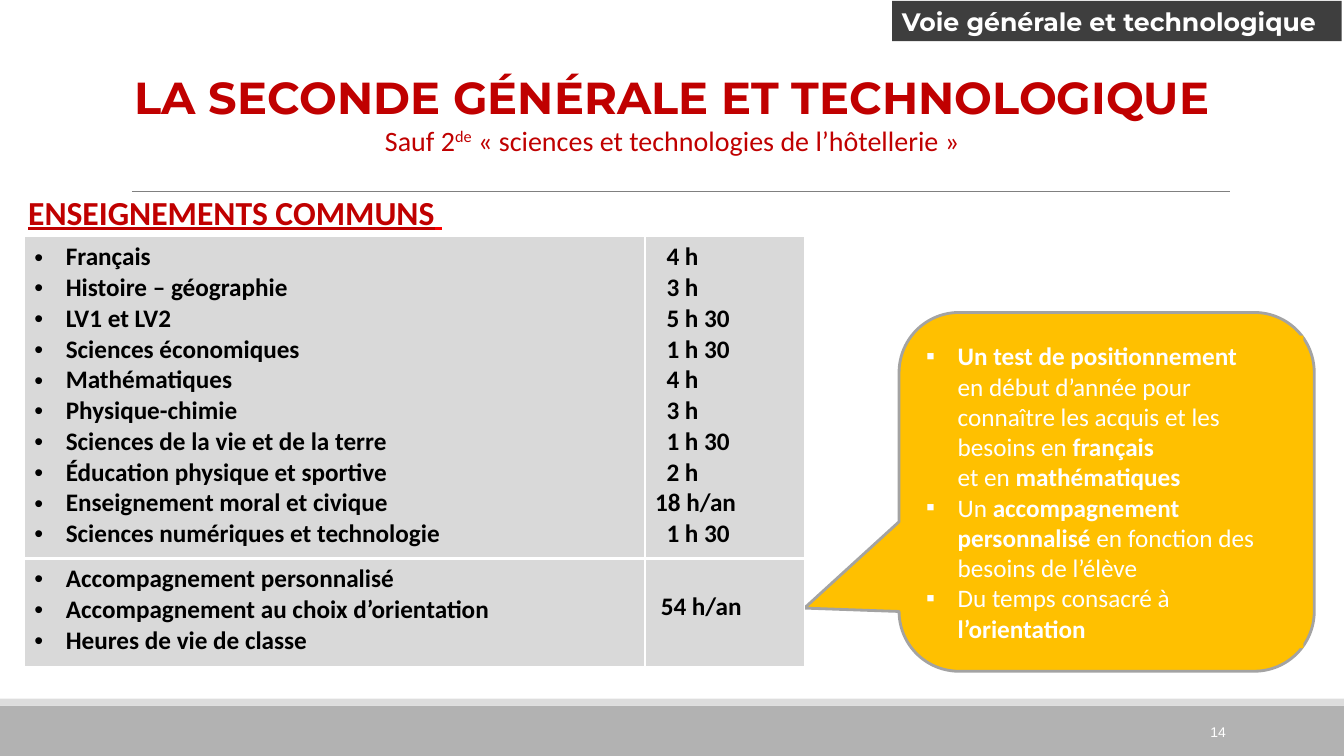
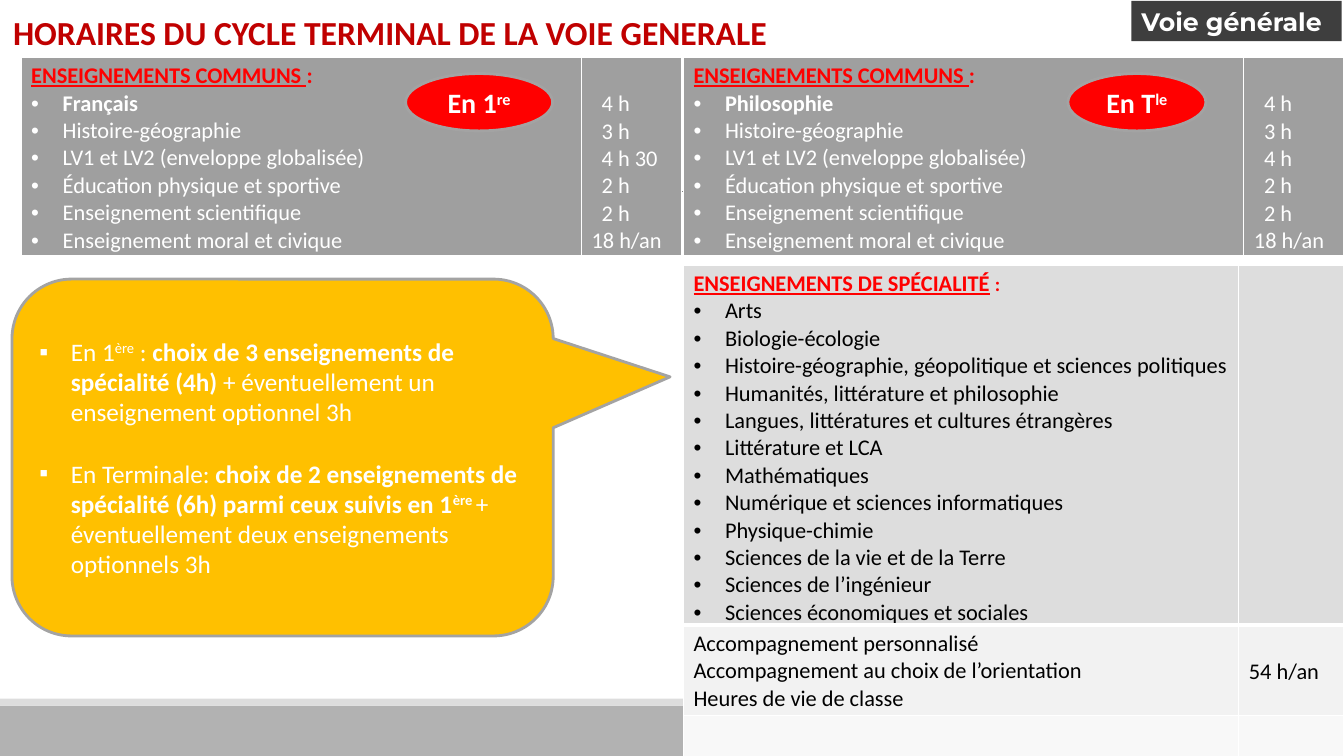
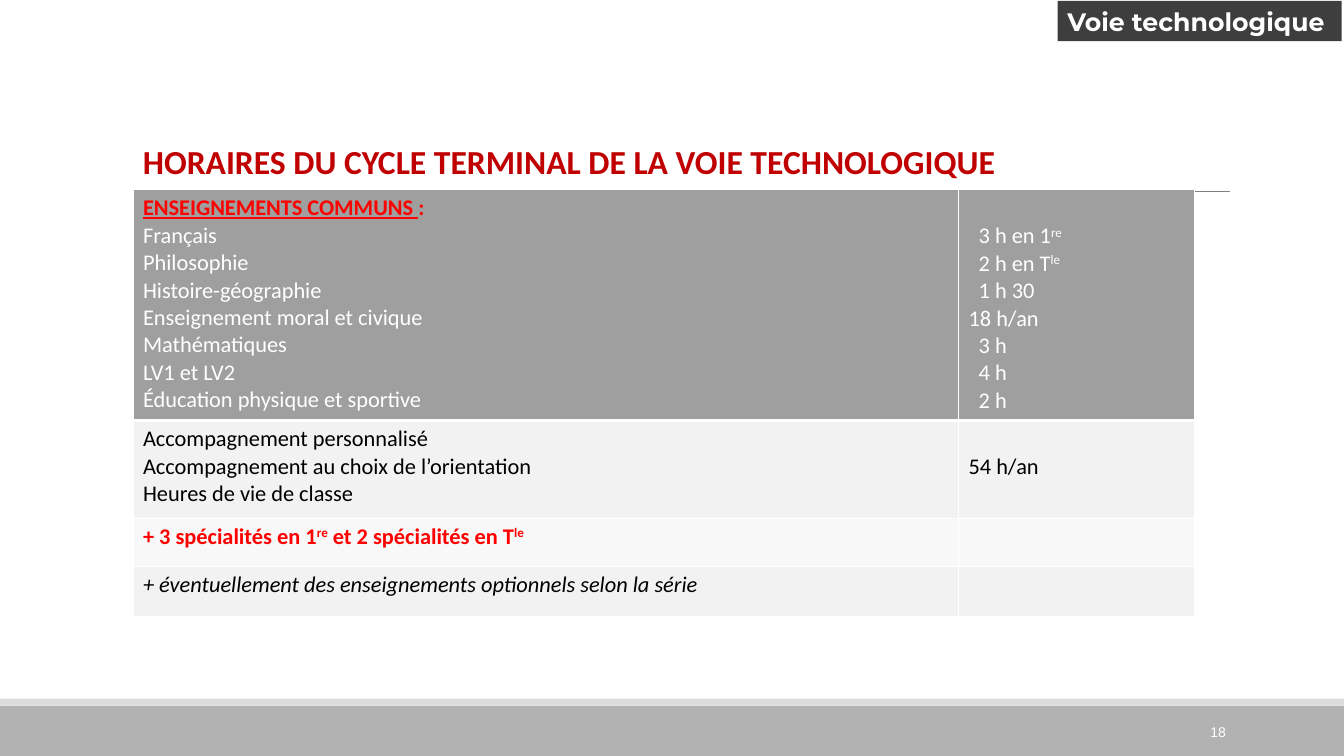
import dataclasses

import lxml.etree
import pptx
import pptx.dml.color
import pptx.enum.shapes
import pptx.enum.text
import pptx.oxml.ns
import pptx.util

Pt = pptx.util.Pt
qn = pptx.oxml.ns.qn
SHAPES = pptx.enum.shapes.MSO_SHAPE
ALIGN = pptx.enum.text.PP_ALIGN
ANCHOR = pptx.enum.text.MSO_ANCHOR
AUTO_SIZE = pptx.enum.text.MSO_AUTO_SIZE

WHITE, BLACK, RED, DARK_RED = "FFFFFF", "000000", "FF0000", "C00000"
AMBER, OUTLINE, TAG_GREY = "FFC000", "A3A3A3", "3E3E3E"
HEADER_GREY, COMMON_GREY, SPECIALTY_GREY = "9F9F9F", "D9D9D9", "DDDDDD"
LIGHT_GREY, PALE_GREY = "F2F2F2", "F8F8F8"
BAND_GREY, RULE_GREY = "B2B2B2", "808080"
SLIDE_WIDTH, SLIDE_HEIGHT = 960, 540
TAG_RIGHT = 958.4
BULLET_INDENT = 22.5
HOURS_TOP = 23.6
THIN, THICK = 0.96, 3
COMMON_HEADING = [("ENSEIGNEMENTS COMMUNS ", "bur"), (":", "br")]
SUPPORT = ["Accompagnement personnalisé", "Accompagnement au choix de l’orientation",
           "Heures de vie de classe"]


@dataclasses.dataclass
class Line:
    """One paragraph: plain text or (text, marks[, size]) runs, with ^ around superscripts."""
    runs: object
    size: float = 18
    color: str = WHITE
    marks: str = ""
    font: str = "Calibri"
    bullet: str = ""
    indent: float = 0
    align: object = ALIGN.LEFT
    before: float = 0


@dataclasses.dataclass
class Row:
    """One timetable row: subjects on the left, hours on the right."""
    height: float
    fill: str
    subjects: list
    hours: list
    hours_top: float = HOURS_TOP
    bottom: float = THIN


def rgb(color):
    """Turn a hex string into a colour."""
    return pptx.dml.color.RGBColor.from_string(color)


def add_runs(paragraph, line):
    """Add the runs of a line with their marks: b, i, u, r for red."""
    runs = [(line.runs, line.marks)] if isinstance(line.runs, str) else line.runs
    for text, marks, *size in runs:
        if text == "\n":
            paragraph.add_line_break()
            continue
        for index, piece in enumerate(text.split("^")):
            if not piece:
                continue
            run = paragraph.add_run()
            run.text = piece
            run.font.size = Pt(size[0] if size else line.size)
            run.font.name = line.font
            run.font.bold = "b" in marks
            run.font.italic = "i" in marks
            run.font.underline = "u" in marks
            run.font.color.rgb = rgb(RED if "r" in marks else line.color)
            if index % 2:
                run.font._element.set("baseline", "30000")


def set_indent(paragraph, line):
    """Indent a paragraph and give it its bullet."""
    properties = paragraph._p.get_or_add_pPr()
    indent = BULLET_INDENT if line.bullet else line.indent
    properties.set("marL", str(int(Pt(indent))))
    properties.set("indent", str(-int(Pt(indent))) if line.bullet else "0")
    if line.bullet:
        lxml.etree.SubElement(properties, qn("a:buFont")).set("typeface", "Arial")
        lxml.etree.SubElement(properties, qn("a:buChar")).set("char", line.bullet)


def write_lines(text_frame, lines):
    """Fill a text frame with lines."""
    for index, line in enumerate(lines):
        paragraph = text_frame.add_paragraph() if index else text_frame.paragraphs[0]
        paragraph.alignment = line.align
        if line.before:
            paragraph.space_before = Pt(line.before)
        set_indent(paragraph, line)
        add_runs(paragraph, line)


def add_box(slide, kind, place, fill, lines=(), outline=None, anchor=ANCHOR.TOP,
            wrap=True, grow=False):
    """Add a filled preset shape with optional text."""
    shape = slide.shapes.add_shape(kind, *map(Pt, place))
    shape.shadow.inherit = False
    shape.fill.solid()
    shape.fill.fore_color.rgb = rgb(fill)
    if outline:
        shape.line.color.rgb = rgb(outline)
        shape.line.width = Pt(2)
    else:
        shape.line.fill.background()
    fill_frame(shape.text_frame, lines, anchor, wrap, grow)
    return shape


def fill_frame(text_frame, lines, anchor, wrap, grow):
    """Set how a text frame behaves and write its lines."""
    text_frame.vertical_anchor = anchor
    text_frame.word_wrap = wrap
    text_frame.auto_size = AUTO_SIZE.SHAPE_TO_FIT_TEXT if grow else AUTO_SIZE.NONE
    write_lines(text_frame, lines)


def add_text(slide, place, lines, anchor=ANCHOR.TOP, wrap=False, grow=True):
    """Add a text box."""
    box = slide.shapes.add_textbox(*map(Pt, place))
    fill_frame(box.text_frame, lines, anchor, wrap, grow)


def add_callout(slide, place, tail, lines=()):
    """Add an amber speech bubble whose tail ends at the given offsets."""
    callout = add_box(slide, SHAPES.ROUNDED_RECTANGULAR_CALLOUT, place, AMBER, lines,
                      OUTLINE, ANCHOR.MIDDLE)
    for index, value in enumerate((*tail, 0.167)):
        callout.adjustments[index] = value


def add_tag(slide, text, width):
    """Add the dark label in the top right corner."""
    line = Line(text, marks="b", font="Montserrat")
    add_box(slide, SHAPES.RECTANGLE, (TAG_RIGHT - width, 0.7, width, 28.8), TAG_GREY,
            [line], wrap=False, grow=True)


def add_level_badge(slide, left, width, text):
    """Add the red oval that names the school year."""
    line = Line(text, 20, marks="b", align=ALIGN.CENTER)
    add_box(slide, SHAPES.OVAL, (left, 52.56, width, 41), RED, [line], OUTLINE, ANCHOR.MIDDLE)


def add_page_number(slide, number):
    """Add the page number in the bottom band."""
    line = Line(str(number), 10, font="Arial", align=ALIGN.RIGHT)
    add_text(slide, (779.8, 508.3, 103, 28.8), [line], ANCHOR.MIDDLE, True, False)


def set_borders(cell, bottom):
    """Give a cell white borders, with its own bottom width."""
    properties = cell._tc.get_or_add_tcPr()
    widths = {"a:lnL": THIN, "a:lnR": THIN, "a:lnT": THIN, "a:lnB": bottom}
    for index, (name, width) in enumerate(widths.items()):
        border = lxml.etree.Element(qn(name), w=str(int(Pt(width))))
        solid = lxml.etree.SubElement(border, qn("a:solidFill"))
        lxml.etree.SubElement(solid, qn("a:srgbClr")).set("val", WHITE)
        properties.insert(index, border)


def add_timetable(slide, left, top, widths, rows):
    """Add a two-column table of subjects and hours."""
    height = sum(row.height for row in rows)
    frame = slide.shapes.add_table(len(rows), 2, Pt(left), Pt(top), Pt(sum(widths)), Pt(height))
    table = frame.table
    table.first_row = table.horz_banding = False
    for column, width in zip(table.columns, widths):
        column.width = Pt(width)
    for index, row in enumerate(rows):
        table.rows[index].height = Pt(row.height)
        for cell, lines in zip(table.rows[index].cells, (row.subjects, row.hours)):
            cell.fill.solid()
            cell.fill.fore_color.rgb = rgb(row.fill)
            set_borders(cell, row.bottom)
            write_lines(cell.text_frame, lines)
        if row.hours:
            table.cell(index, 1).margin_top = Pt(row.hours_top)


def text_lines(texts, size, color, marks="", bullet=""):
    """Make lines of one style."""
    return [Line(text, size, color, marks, bullet=bullet) for text in texts]


def hour_lines(texts, size, color, marks=""):
    """Make lines of hours, indenting weekly ones under the yearly ones."""
    return [Line(text, size, color, marks, indent=0 if text.endswith("/an") else 0.45 * size)
            for text in texts]


def add_slide(presentation):
    """Add a blank slide with the shared rule and bottom bands."""
    slide = presentation.slides.add_slide(presentation.slide_layouts[6])
    rule = slide.shapes.add_connector(pptx.enum.shapes.MSO_CONNECTOR.STRAIGHT,
                                      Pt(94.3), Pt(136.8), Pt(878.4), Pt(136.8))
    rule.line.color.rgb = rgb(RULE_GREY)
    rule.line.width = Pt(0.5)
    lxml.etree.SubElement(rule._element.spPr, qn("a:effectLst"))
    add_box(slide, SHAPES.RECTANGLE, (0, 504, SLIDE_WIDTH, 36), BAND_GREY)
    add_box(slide, SHAPES.RECTANGLE, (0, 499, SLIDE_WIDTH, 5), SPECIALTY_GREY)
    return slide


def build_second_year(presentation):
    """Build the slide on the first lycée year."""
    slide = add_slide(presentation)
    add_callout(slide, (642.2, 223.2, 296.6, 256.3), (-0.728, 0.324))
    advice = [
        [("Un test de positionnement ", "b"), ("\n", ""),
         ("en début d’année pour connaître les acquis et les besoins en ", ""),
         ("français ", "b"), ("\n", ""), ("et en ", ""), ("mathématiques", "b")],
        [("Un ", ""), ("accompagnement personnalisé ", "b"),
         ("en fonction des besoins de l’élève", "")],
        [("Du temps consacré à ", ""), ("l’orientation", "b")],
    ]
    add_box(slide, SHAPES.RECTANGLE, (654.5, 239.8, 276.5, 223.2), AMBER,
            text_lines(advice, 18, WHITE, bullet="▪"), grow=True)
    subjects = ["Français", "Histoire – géographie", "LV1 et LV2", "Sciences économiques",
                "Mathématiques", "Physique-chimie", "Sciences de la vie et de la terre",
                "Éducation physique et sportive", "Enseignement moral et civique",
                "Sciences numériques et technologie"]
    hours = ["4 h", "3 h", "5 h 30", "1 h 30", "4 h", "3 h", "1 h 30", "2 h", "18 h/an", "1 h 30"]
    support = ["Accompagnement personnalisé", "Accompagnement au choix d’orientation",
               "Heures de vie de classe"]
    add_timetable(slide, 17.3, 169.2, (443.5, 113.8), [
        Row(229.7, COMMON_GREY, text_lines(subjects, 18, BLACK, "b", "•"),
            hour_lines(hours, 18, BLACK, "b"), 3.6, THICK),
        Row(77, COMMON_GREY, text_lines(support, 18, BLACK, "b", "•"),
            [Line("54 h/an", 18, BLACK, "b", indent=4)]),
    ])
    add_text(slide, (64.8, 46.1, 830.9, 69.8), [
        Line("LA SECONDE GÉNÉRALE ET TECHNOLOGIQUE", 32, DARK_RED, "b", "Montserrat",
             align=ALIGN.CENTER),
        Line("Sauf 2^de^ « sciences et technologies de l’hôtellerie »", 20, DARK_RED,
             align=ALIGN.CENTER),
    ])
    add_tag(slide, "Voie générale et technologique", 321.2)
    add_text(slide, (13, 133.2, 310.3, 36),
             [Line([("ENSEIGNEMENTS COMMUNS", "bu"), (" ", "bur")], 24, DARK_RED)])
    add_page_number(slide, 14)


def build_general(presentation):
    """Build the slide on the general track."""
    slide = add_slide(presentation)
    add_text(slide, (2.2, 5, 553.7, 36),
             [Line("HORAIRES DU CYCLE TERMINAL DE LA VOIE GENERALE", 24, DARK_RED, "b")])
    add_tag(slide, "Voie générale", 150.2)
    shared = ["Histoire-géographie", "LV1 et LV2 (enveloppe globalisée)",
              "Éducation physique et sportive", "Enseignement scientifique",
              "Enseignement moral et civique"]
    years = [(15.1, "Français", "4 h 30", "En 1^re^", 105.1),
             (488.2, "Philosophie", "4 h", "En T^le^", 98.6)]
    for left, first, languages, label, badge_width in years:
        subjects = [Line(COMMON_HEADING, 16), Line(first, 16, marks="b", bullet="•"),
                    *text_lines(shared, 16, WHITE, bullet="•")]
        hours = hour_lines(["4 h", "3 h", languages, "2 h", "2 h", "18 h/an"], 16, WHITE)
        add_timetable(slide, left, 41, (400.3, 71.3),
                      [Row(141.8, HEADER_GREY, subjects, hours, bottom=THICK)])
        add_level_badge(slide, left + 274.6, badge_width, label)
    specialties = ["Arts", "Biologie-écologie",
                   "Histoire-géographie, géopolitique et sciences politiques",
                   "Humanités, littérature et philosophie",
                   "Langues, littératures et cultures étrangères", "Littérature et LCA",
                   "Mathématiques", "Numérique et sciences informatiques", "Physique-chimie",
                   "Sciences de la vie et de la Terre", "Sciences de l’ingénieur",
                   "Sciences économiques et sociales"]
    heading = Line([("ENSEIGNEMENTS DE SPÉCIALITÉ", "bur"), (" ", "br"), (":", "br", 14)], 16)
    add_timetable(slide, 488.2, 189.4, (396.7, 74.9), [
        Row(257, SPECIALTY_GREY, [heading, *text_lines(specialties, 16, BLACK, bullet="•")], [],
            bottom=THICK),
        Row(64.8, LIGHT_GREY, text_lines(SUPPORT, 16, BLACK), hour_lines(["54 h/an"], 16, BLACK)),
        Row(29.5, PALE_GREY, [], []),
    ])
    first_year = [("En 1^ère^ : ", ""), ("choix de 3 enseignements de spécialité (4h) ", "b"),
                  ("+ éventuellement un enseignement optionnel 3h", "")]
    last_year = [("En Terminale: ", ""),
                 ("choix de 2 enseignements de spécialité (6h) parmi ceux suivis en 1^ère ^", "b"),
                 ("+ éventuellement deux enseignements optionnels 3h", "")]
    add_callout(slide, (8.6, 199.4, 386.6, 254.9), (0.716, -0.226),
                [Line(first_year, bullet="▪"), Line(last_year, bullet="▪", before=22)])


def build_technological(presentation):
    """Build the slide on the technological track."""
    slide = add_slide(presentation)
    subjects = ["Français", "Philosophie", "Histoire-géographie", "Enseignement moral et civique",
                "Mathématiques", "LV1 et LV2", "Éducation physique et sportive"]
    hours = ["3 h en 1^re^", "2 h en T^le^", "1 h 30", "18 h/an", "3 h", "4 h", "2 h"]
    add_timetable(slide, 95, 135.4, (589.7, 168.5), [
        Row(164.9, HEADER_GREY, [Line(COMMON_HEADING, 16), *text_lines(subjects, 16, WHITE)],
            hour_lines(hours, 16, WHITE), bottom=THICK),
        Row(69.8, LIGHT_GREY, text_lines(SUPPORT, 16, BLACK), hour_lines(["54 h/an"], 16, BLACK)),
        Row(34.6, PALE_GREY,
            [Line("+ 3 spécialités en 1^re^ et 2 spécialités en T^le^", 16, RED, "b")], []),
        Row(36, LIGHT_GREY,
            [Line("+ éventuellement des enseignements optionnels selon la série", 16, BLACK, "i")],
            []),
    ])
    add_text(slide, (95, 97.2, 865, 36),
             [Line("HORAIRES DU CYCLE TERMINAL DE LA VOIE TECHNOLOGIQUE", 24, DARK_RED, "b")],
             wrap=True)
    add_page_number(slide, 18)
    add_tag(slide, "Voie technologique", 203)


def main():
    """Build and save the presentation."""
    presentation = pptx.Presentation()
    presentation.slide_width = Pt(SLIDE_WIDTH)
    presentation.slide_height = Pt(SLIDE_HEIGHT)
    build_second_year(presentation)
    build_general(presentation)
    build_technological(presentation)
    presentation.save("out.pptx")


if __name__ == "__main__":
    main()
